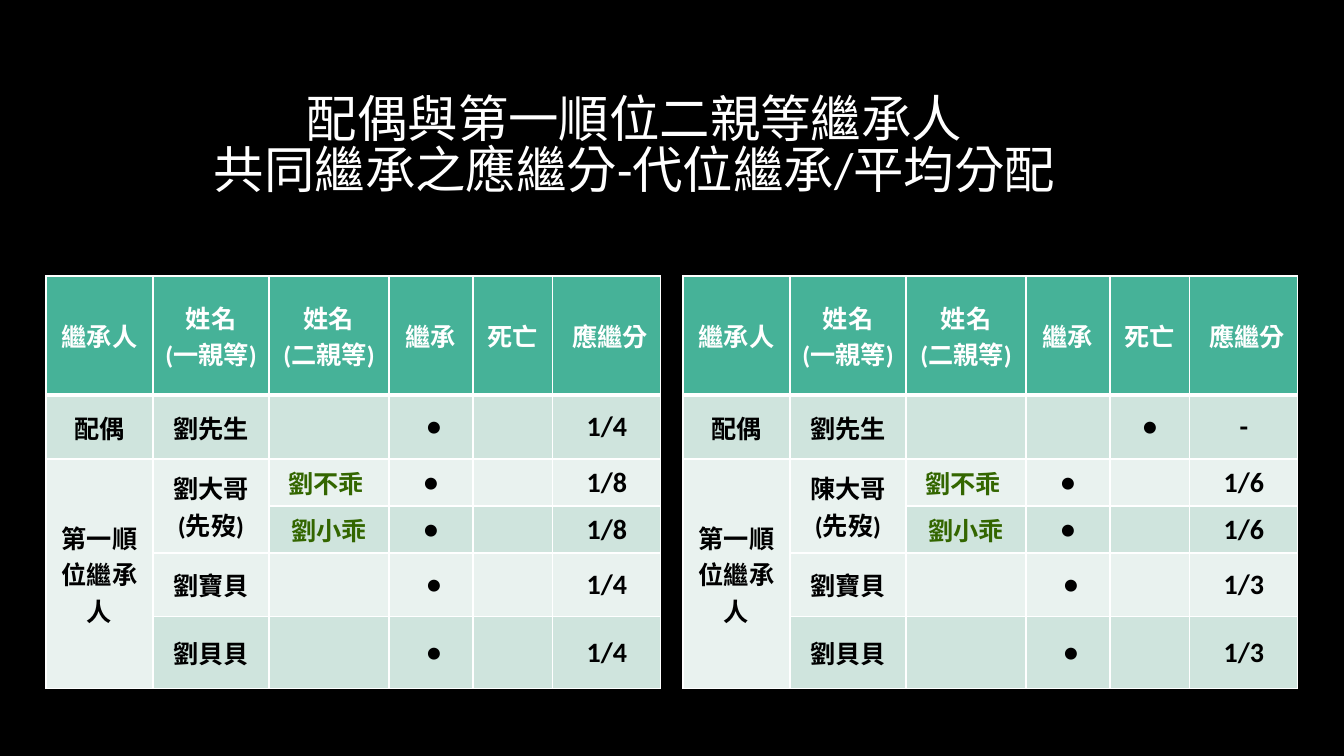
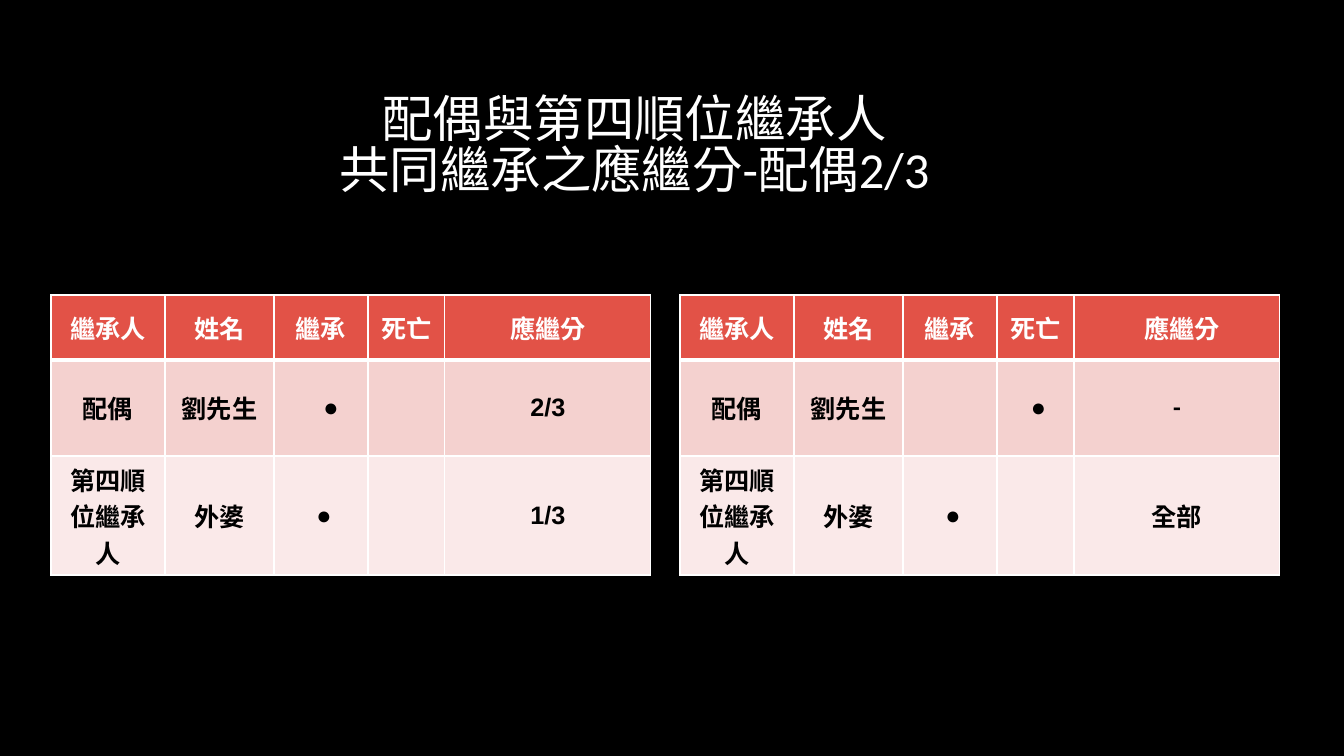
from lxml.etree import SubElement
from pptx import Presentation
from pptx.dml.color import RGBColor
from pptx.enum.lang import MSO_LANGUAGE_ID
from pptx.enum.text import MSO_ANCHOR, PP_ALIGN
from pptx.oxml.ns import qn
from pptx.util import Pt

PX = 12192000 / 1344
BLACK = RGBColor(0x00, 0x00, 0x00)
WHITE = RGBColor(0xFF, 0xFF, 0xFF)
GREEN_TEXT = RGBColor(0x33, 0x66, 0x00)
GREEN = RGBColor(0x46, 0xB2, 0x98)
GREEN_MID = RGBColor(0xCF, 0xE4, 0xDD)
GREEN_PALE = RGBColor(0xE9, 0xF2, 0xEF)
RED = RGBColor(0xE2, 0x52, 0x47)
RED_MID = RGBColor(0xF4, 0xD1, 0xCF)
RED_PALE = RGBColor(0xFA, 0xE9, 0xE9)

GRANDCHILDREN = ("劉不乖", "劉小乖")
DOT = "●"


def px(n):
    return round(n * PX)


def put_text(tf, text, size=18, font="Calibri", color=BLACK, bold=False, spacing=None):
    for i, line in enumerate(text.split("\n")):
        p = tf.add_paragraph() if i else tf.paragraphs[0]
        p.text = line
        p.alignment = PP_ALIGN.CENTER
        if spacing:
            p.line_spacing = spacing
        for r in p.runs:
            r.font.size = Pt(size)
            r.font.name = font
            r.font.bold = bold
            r.font.color.rgb = color
            r.font.language_id = MSO_LANGUAGE_ID.TRADITIONAL_CHINESE


def set_border(cell, side, width):
    ln = SubElement(cell._tc.get_or_add_tcPr(), qn(f"a:ln{side}"), w=str(Pt(width)))
    fill = SubElement(ln, qn("a:solidFill"))
    SubElement(fill, qn("a:srgbClr"), val=str(WHITE))


class Deck:
    def __init__(self):
        self.prs = Presentation()
        self.prs.slide_width = px(1344)
        self.prs.slide_height = px(756)
        self.s = None

    def slide(self, title):
        self.s = self.prs.slides.add_slide(self.prs.slide_layouts[6])
        bg = self.s.background.fill
        bg.solid()
        bg.fore_color.rgb = BLACK
        tf = self.s.shapes.add_textbox(px(76), px(68), px(1117), px(160)).text_frame
        tf.word_wrap = True
        tf.vertical_anchor = MSO_ANCHOR.MIDDLE
        put_text(tf, title, size=36, color=WHITE, spacing=0.83)

    def cell(self, cell, value, row, fill, **fmt):
        text, shift = value if isinstance(value, tuple) else (value, 0)
        cell.vertical_anchor = MSO_ANCHOR.MIDDLE
        cell.margin_left = px(11 + 2 * max(shift, 0))
        cell.margin_right = px(11 + 2 * max(-shift, 0))
        cell.margin_top = cell.margin_bottom = px(5)
        for side in "LRTB":
            heavy = (row, side) in ((0, "B"), (1, "T"))
            set_border(cell, side, 3 if heavy else 1)
        cell.fill.solid()
        cell.fill.fore_color.rgb = fill
        if text:
            color = WHITE if row == 0 else GREEN_TEXT if text in GRANDCHILDREN else BLACK
            put_text(cell.text_frame, text, color=color, bold=True, **fmt)

    def table(self, left, top, widths, heights, rows, fills, font="Calibri",
              share_size=18, calibri=()):
        head, mid, pale = fills
        table = self.s.shapes.add_table(len(rows), len(widths), px(left), px(top),
                                        px(sum(widths)), px(sum(heights))).table
        table.horz_banding = False
        for column, width in zip(table.columns, widths):
            column.width = px(width)
        for r, (row, height) in enumerate(zip(rows, heights)):
            table.rows[r].height = px(height)
            fill = head if r == 0 else mid if r % 2 else pale
            for c, value in enumerate(row):
                is_share = r > 0 and c == len(row) - 1
                self.cell(table.cell(r, c), value, r, fill,
                          size=share_size if is_share else 18,
                          font="Calibri" if value in calibri else font)
        for c in range(len(widths)):
            for r in range(1, len(rows)):
                if rows[r][c] is None and rows[r - 1][c] is not None:
                    end = r
                    while end + 1 < len(rows) and rows[end + 1][c] is None:
                        end += 1
                    table.cell(r - 1, c).merge(table.cell(end, c))


def first_order_rows(spouse, eldest, grandchild_share, child_share):
    dot = (DOT, 3)
    return [
        ["繼承人", "姓名\n(一親等)", "姓名\n(二親等)", "繼承", "死亡", ("應繼分", 3)],
        ["配偶", "劉先生", "", *spouse],
        ["第一順位繼承人", f"{eldest}\n(先歿)", ("劉不乖", -3), DOT, "", grandchild_share],
        [None, None, "劉小乖", DOT, "", grandchild_share],
        [None, "劉寶貝", "", dot, "", child_share],
        [None, "劉貝貝", "", dot, "", child_share],
    ]


def fourth_order_rows(share_head, spouse, share):
    return [
        ["繼承人", "姓名", "繼承", "死亡", share_head],
        ["配偶", "劉先生", *spouse],
        ["第四順位繼承人", "外婆", (DOT, 3), "", share],
    ]


def main():
    deck = Deck()

    deck.slide("配偶與第一順位二親等繼承人\v共同繼承之應繼分-代位繼承/平均分配")
    for left, rows in (
        (46, first_order_rows([(DOT, 3), "", "1/4"], "劉大哥", "1/8", "1/4")),
        (683, first_order_rows(["", DOT, "-"], "陳大哥", "1/6", "1/3")),
    ):
        deck.table(left, 276, [107, 116, 120, 84, 80, 108], [119, 64, 47, 47, 64, 72],
                   rows, (GREEN, GREEN_MID, GREEN_PALE), share_size=20)

    deck.slide("配偶與第四順位繼承人\v共同繼承之應繼分-配偶2/3")
    for left, rows in (
        (51, fourth_order_rows("應繼分", [(DOT, 10), "", "2/3"], "1/3")),
        (680, fourth_order_rows(("應繼分", 5), ["", (DOT, 3), "-"], "全部")),
    ):
        deck.table(left, 295, [114, 109, 94, 77, 206], [65, 96, 119],
                   rows, (RED, RED_MID, RED_PALE), font="Arial",
                   calibri=("死亡", "-", "全部"))

    deck.prs.save("out.pptx")


if __name__ == "__main__":
    main()
